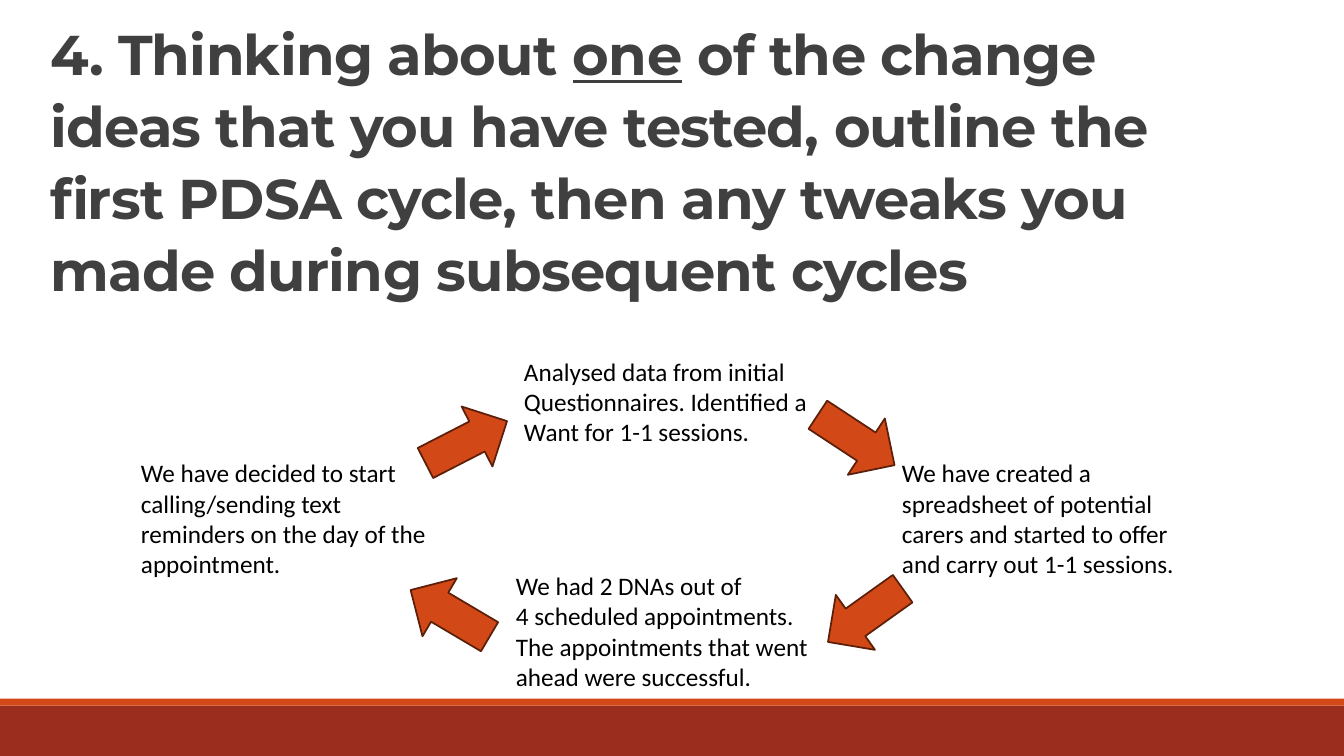
from pptx import Presentation
from pptx import util as u
from pptx.dml import color
from pptx.enum import shapes, text


def rgb(value):
    return color.RGBColor.from_string(value)


class CycleSlide:
    """Draws bands, text and arrows on one slide in a shared style."""

    RUST, BRICK, OUTLINE = "D34817", "9B2D1F", "5C200A"
    TITLE, BODY = "404040", "000000"

    def __init__(self, slide):
        self.slide = slide

    def shape(self, kind, left, top, width, height, fill):
        shape = self.slide.shapes.add_shape(
            kind, u.Pt(left), u.Pt(top), u.Pt(width), u.Pt(height))
        shape.shadow.inherit = False
        shape.fill.solid()
        shape.fill.fore_color.rgb = rgb(fill)
        return shape

    def band(self, top, height, fill):
        shape = self.shape(shapes.MSO_SHAPE.RECTANGLE, 0, top, 960, height, fill)
        shape.line.fill.background()

    def arrow(self, left, top, rotation):
        shape = self.shape(shapes.MSO_SHAPE.DOWN_ARROW, left, top, 48.2, 65.5, self.RUST)
        shape.rotation = rotation
        shape.line.color.rgb = rgb(self.OUTLINE)
        shape.line.width = u.Pt(1.25)

    def frame(self, left, top, width, height):
        box = self.slide.shapes.add_textbox(
            u.Pt(left), u.Pt(top), u.Pt(width), u.Pt(height))
        box.text_frame.word_wrap = True
        return box.text_frame

    def run(self, paragraph, words, font, size, fill):
        run = paragraph.add_run()
        run.text = words
        run.font.name = font
        run.font.size = u.Pt(size)
        run.font.color.rgb = rgb(fill)
        return run

    def title(self, left, top, width, height, pieces):
        frame = self.frame(left, top, width, height)
        frame.vertical_anchor = text.MSO_ANCHOR.BOTTOM
        paragraph = frame.paragraphs[0]
        paragraph.line_spacing = 1.07
        paragraph.space_after = u.Pt(8)
        for words, underlined in pieces:
            run = self.run(paragraph, words, "Montserrat", 40, self.TITLE)
            run.font.bold = True
            run.font.underline = underlined
            run._r.get_or_add_rPr().set("spc", "-50")

    def step(self, left, top, width, height, lines, wrap=True):
        frame = self.frame(left, top, width, height)
        frame.word_wrap = wrap
        frame.auto_size = text.MSO_AUTO_SIZE.SHAPE_TO_FIT_TEXT
        for index, words in enumerate(lines):
            paragraph = frame.add_paragraph() if index else frame.paragraphs[0]
            self.run(paragraph, words, "Calibri", 18, self.BODY)


def main():
    presentation = Presentation()
    presentation.slide_width = u.Pt(960)
    presentation.slide_height = u.Pt(540)
    cycle = CycleSlide(presentation.slides.add_slide(presentation.slide_layouts[6]))

    cycle.band(504, 36, cycle.BRICK)
    cycle.band(499, 5, cycle.RUST)
    cycle.title(28.8, -9.4, 878.4, 229, [
        ("4. Thinking about ", False),
        ("one", True),
        (" of the change ideas that you have tested, outline the first PDSA cycle, "
         "then any tweaks you made during subsequent cycles", False),
    ])

    cycle.step(367.2, 250.6, 219.6, 72.7, [
        "Analysed data from initial",
        "Questionnaires. Identified a",
        "Want for 1-1 sessions.",
    ], wrap=False)
    cycle.step(637.2, 323.3, 231.1, 94.3, [
        "We have created a spreadsheet of potential carers and started to offer",
        "and carry out 1-1 sessions.",
    ])
    cycle.step(361.4, 403.9, 236.9, 94.3, [
        "We had 2 DNAs out of",
        "4 scheduled appointments.",
        "The appointments that went ahead were successful.",
    ])
    cycle.step(93.6, 323.3, 229, 94.3, [
        "We have decided to start calling/sending text reminders on the day of the appointment.",
    ])

    for left, top, rotation in (
        (587.5, 281.5, 303.3),
        (308.9, 283, 242.8),
        (297.4, 405.4, 120.6),
        (594, 406.8, 54.5),
    ):
        cycle.arrow(left, top, rotation)

    presentation.save("out.pptx")


if __name__ == "__main__":
    main()
